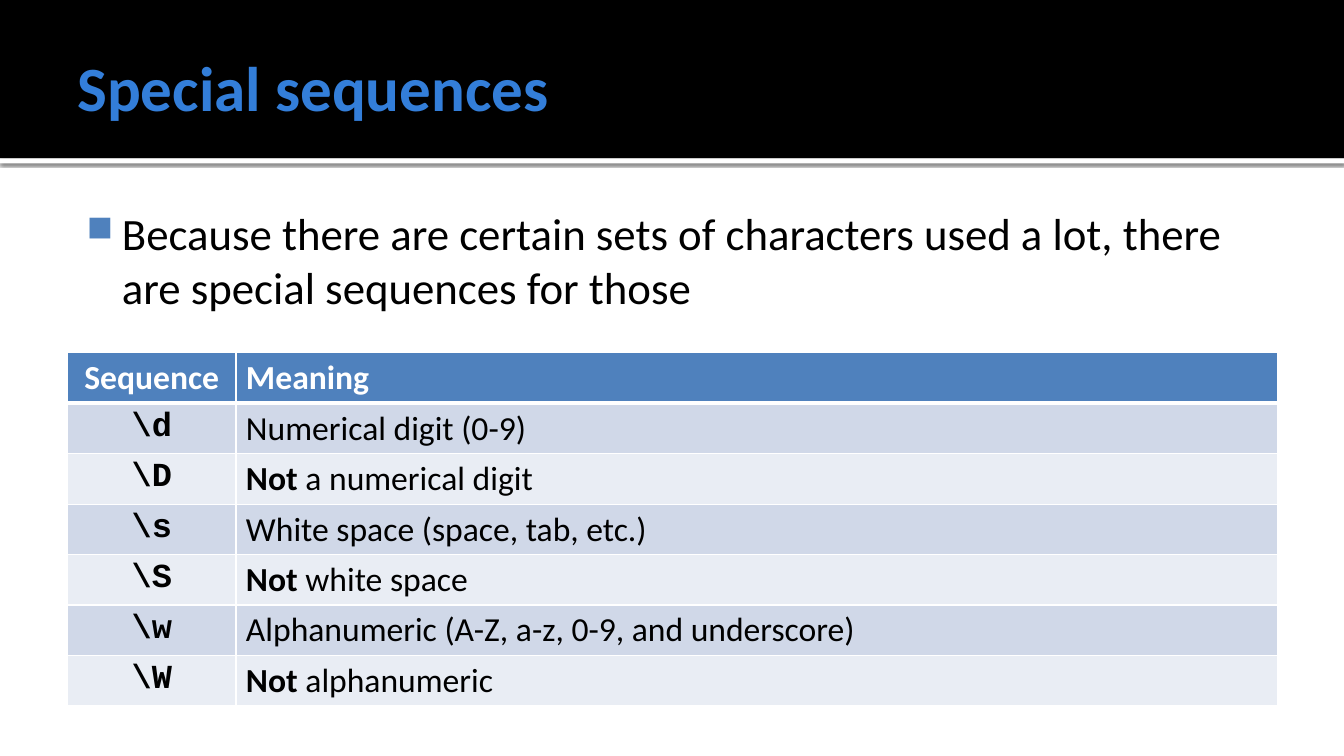
from dataclasses import dataclass, field

import pptx
import pptx.dml.color
import pptx.enum.shapes
import pptx.enum.text
import pptx.oxml
import pptx.oxml.ns
import pptx.util

Inches = pptx.util.Inches
Align = pptx.enum.text.PP_ALIGN
Anchor = pptx.enum.text.MSO_ANCHOR
NAMESPACE = pptx.oxml.ns.nsdecls("a")


@dataclass(frozen=True)
class Theme:
    white: str = "FFFFFF"
    black: str = "000000"
    title: str = "337ED9"
    accent: str = "4F81BD"
    bands: tuple[str, str] = ("D0D8E8", "E9EDF4")
    text_font: str = "Calibri"
    code_font: str = "Courier New"
    title_size: int = 45
    body_size: int = 32
    table_size: int = 24
    rule_width: int = 1
    header_rule_width: int = 3


THEME = Theme()


@dataclass(frozen=True)
class Area:
    left: float
    top: float
    width: float
    height: float

    def lengths(self) -> list[int]:
        return [Inches(v) for v in (self.left, self.top, self.width, self.height)]


@dataclass(frozen=True)
class Span:
    text: str
    size: int = THEME.table_size
    color: str = THEME.black
    bold: bool = False
    font: str = THEME.text_font


@dataclass(frozen=True)
class TextBox:
    area: Area
    span: Span
    frame_format: dict = field(default_factory=dict)


@dataclass(frozen=True)
class Sequence:
    code: str
    meaning: str
    negated: bool = False


TITLE = TextBox(
    Area(0.67, 0.17, 12, 1.37),
    Span("Special sequences", THEME.title_size, THEME.title, True),
    dict(vertical_anchor=Anchor.MIDDLE, margin_left=Inches(0.1), margin_top=Inches(0.05),
         margin_right=Inches(0.05), margin_bottom=Inches(0.05)),
)
BODY = TextBox(
    Area(0.67, 1.94, 12, 5.06),
    Span("Because there are certain sets of characters used a lot, "
         "there are special sequences for those", THEME.body_size),
    dict(vertical_anchor=Anchor.TOP, margin_left=Inches(0.06), margin_top=Inches(0.1),
         margin_right=Inches(0.1), margin_bottom=Inches(0.05)),
)
TABLE_AREA = Area(0.67, 3.5, 12, 3.5)
COLUMN_WIDTHS = (1.67, 10.33)
HEADINGS = ("Sequence", "Meaning")
SEQUENCES = (
    Sequence(r"\d", "Numerical digit (0-9)"),
    Sequence(r"\D", " a numerical digit", True),
    Sequence(r"\s", "White space (space, tab, etc.)"),
    Sequence(r"\S", " white space", True),
    Sequence(r"\w", "Alphanumeric (A-Z, a-z, 0-9, and underscore)"),
    Sequence(r"\W", " alphanumeric", True),
)


def rgb(color: str) -> pptx.dml.color.RGBColor:
    return pptx.dml.color.RGBColor.from_string(color)


def apply_format(target, values: dict) -> None:
    for name, value in values.items():
        setattr(target, name, value)


def add_span(para, span: Span) -> None:
    run = para.add_run()
    run.text = span.text
    apply_format(run.font, dict(name=span.font, size=pptx.util.Pt(span.size), bold=span.bold))
    run.font.color.rgb = rgb(span.color)


def add_band(page, area: Area, color: str):
    band = page.shapes.add_shape(pptx.enum.shapes.MSO_SHAPE.RECTANGLE, *area.lengths())
    band.shadow.inherit = False
    band.fill.solid()
    band.fill.fore_color.rgb = rgb(color)
    band.line.fill.background()
    return band


def add_drop_shadow(band) -> None:
    effects = band._element.spPr.find(pptx.oxml.ns.qn("a:effectLst"))
    effects.append(pptx.oxml.parse_xml(
        f'<a:outerShdw {NAMESPACE} blurRad="{pptx.util.Pt(2.5)}" dist="{pptx.util.Pt(0.8)}" '
        f'dir="5400000" algn="tl" rotWithShape="0"><a:srgbClr val="{THEME.black}">'
        '<a:alpha val="60000"/></a:srgbClr></a:outerShdw>'))


def add_text(page, content: TextBox):
    box = page.shapes.add_textbox(*content.area.lengths())
    apply_format(box.text_frame, dict(word_wrap=True, **content.frame_format))
    para = box.text_frame.paragraphs[0]
    add_span(para, content.span)
    return para


def add_bullet(para) -> None:
    properties = para._p.get_or_add_pPr()
    properties.set("marL", str(Inches(0.48)))
    properties.set("indent", str(Inches(-0.35)))
    for markup in (
        f'<a:buClr {NAMESPACE}><a:srgbClr val="{THEME.accent}"/></a:buClr>',
        f'<a:buSzPct {NAMESPACE} val="80000"/>',
        f'<a:buChar {NAMESPACE} char="■"/>',
    ):
        properties.append(pptx.oxml.parse_xml(markup))


def fill_cell(cell, spans: list[Span], align, color: str, rules: dict[str, int]) -> None:
    para = cell.text_frame.paragraphs[0]
    para.alignment = align
    for span in spans:
        add_span(para, span)
    cell.fill.solid()
    cell.fill.fore_color.rgb = rgb(color)
    # Border lines come before the fill in the cell properties
    for index, (side, width) in enumerate(rules.items()):
        cell._tc.get_or_add_tcPr().insert(index, pptx.oxml.parse_xml(
            f'<a:ln{side} {NAMESPACE} w="{pptx.util.Pt(width)}"><a:solidFill>'
            f'<a:srgbClr val="{THEME.white}"/></a:solidFill></a:ln{side}>'))


def meaning_spans(sequence: Sequence) -> list[Span]:
    prefix = [Span("Not", bold=True)] if sequence.negated else []
    return prefix + [Span(sequence.meaning)]


def add_sequence_table(page) -> None:
    rows = [[[Span(text, color=THEME.white, bold=True)] for text in HEADINGS]]
    rows += [[[Span(item.code, bold=True, font=THEME.code_font)], meaning_spans(item)]
             for item in SEQUENCES]
    table = page.shapes.add_table(len(rows), len(HEADINGS), *TABLE_AREA.lengths()).table
    for column, width in zip(table.columns, COLUMN_WIDTHS):
        column.width = Inches(width)
    for row_index, row in enumerate(rows):
        color = THEME.bands[(row_index - 1) % 2] if row_index else THEME.accent
        rules = dict.fromkeys("LRTB", THEME.rule_width)
        if row_index < 2:
            rules["T" if row_index else "B"] = THEME.header_rule_width
        for column_index, (spans, align) in enumerate(zip(row, (Align.CENTER, Align.LEFT))):
            fill_cell(table.cell(row_index, column_index), spans, align, color, rules)


def main() -> None:
    deck = pptx.Presentation()
    apply_format(deck, dict(slide_width=Inches(13.33), slide_height=Inches(7.5)))
    page = deck.slides.add_slide(deck.slide_layouts[6])

    # Header: white strip with a shadow, below the black band
    add_drop_shadow(add_band(page, Area(0, 1.57, 13.33, 0.05), THEME.white))
    add_band(page, Area(0, 0, 13.33, 1.57), THEME.black)

    # Title and bulleted text
    add_text(page, TITLE)
    add_bullet(add_text(page, BODY))

    # Table of sequences
    add_sequence_table(page)
    deck.save("out.pptx")


if __name__ == "__main__":
    main()
